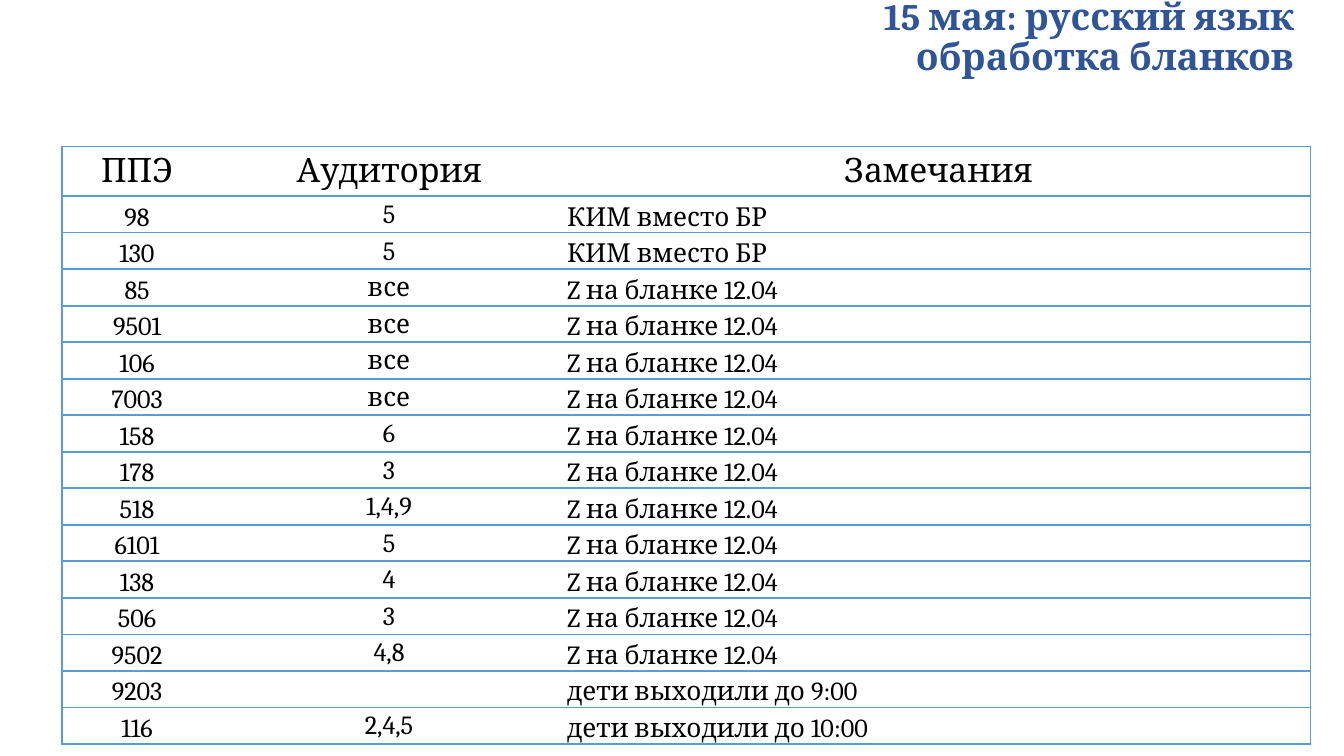
"""Build the slide listing remarks on processing the Russian language exam forms."""
import pptx
import pptx.dml.color
import pptx.enum.text
import pptx.oxml
import pptx.oxml.ns
import pptx.util

THEME = {
    "font": "Cambria",
    "title": "2F5597", "text": "000000", "line": "5B9BD5", "fill": "FFFFFF",
    "title_size": 20, "header_size": 18, "body_size": 14, "line_width": 1,
}
ALIGN = pptx.enum.text.PP_ALIGN
ANCHOR = pptx.enum.text.MSO_ANCHOR
inches = pptx.util.Inches


def style(para, size, color, align, bold=False):
    para.alignment = align
    para.font.name = THEME["font"]
    para.font.size = pptx.util.Pt(size)
    para.font.bold = bold
    para.font.color.rgb = pptx.dml.color.RGBColor.from_string(color)


def add_border(cell, side, visible):
    color = THEME["line"]
    paint = f'<a:solidFill><a:srgbClr val="{color}"/></a:solidFill>' if visible else "<a:noFill/>"
    width = pptx.util.Pt(THEME["line_width"])
    namespace = pptx.oxml.ns.nsdecls("a")
    line = pptx.oxml.parse_xml(f'<a:ln{side} {namespace} w="{width}">{paint}</a:ln{side}>')
    cell._tc.get_or_add_tcPr().append(line)


deck = pptx.Presentation()
deck.slide_width = inches(10)
deck.slide_height = deck.slide_width * 9 // 16
page = deck.slides.add_slide(deck.slide_layouts[6])

form_remark = "Z на бланке 12.04"
rooms = [("85", "все"), ("9501", "все"), ("106", "все"), ("7003", "все"), ("158", "6"),
         ("178", "3"), ("518", "1,4,9"), ("6101", "5"), ("138", "4"), ("506", "3"),
         ("9502", "4,8")]
records = [
    ("ППЭ", "Аудитория", "Замечания"),
    ("98", "5", "КИМ вместо БР"),
    ("130", "5", "КИМ вместо БР"),
    *[(point, room, form_remark) for point, room in rooms],
    ("9203", "", "дети выходили до 9:00"),
    ("116", "2,4,5", "дети выходили до 10:00"),
]
column_widths = [1.12, 2.63, 5.54]
table_height, header_height = 4.45, 0.37
row_height = (table_height - header_height) / (len(records) - 1)

table = page.shapes.add_table(
    len(records), len(column_widths), inches(0.46), inches(1.09),
    inches(sum(column_widths)), inches(table_height)).table
table.first_row = False
table.horz_banding = False
for column, width in zip(table.columns, column_widths):
    column.width = inches(width)

last = len(column_widths) - 1
for r, record in enumerate(records):
    header = r == 0
    table.rows[r].height = inches(header_height if header else row_height)
    size = THEME["header_size" if header else "body_size"]
    for c, wording in enumerate(record):
        cell = table.cell(r, c)
        cell.margin_left = cell.margin_right = cell.margin_top = inches(0.01)
        cell.margin_bottom = 0
        cell.vertical_anchor = ANCHOR.MIDDLE if header or c == 1 else ANCHOR.BOTTOM
        for side, visible in (("L", c == 0), ("R", c == last), ("T", True), ("B", True)):
            add_border(cell, side, visible)
        cell.fill.solid()
        cell.fill.fore_color.rgb = pptx.dml.color.RGBColor.from_string(THEME["fill"])
        para = cell.text_frame.paragraphs[0]
        if wording:
            para.text = wording
        else:
            para._p.get_or_add_endParaRPr().set("sz", str(size * 100))
        style(para, size, THEME["text"], ALIGN.LEFT if c == last and not header else ALIGN.CENTER)

title = page.shapes.add_textbox(inches(0.98), inches(0.02), inches(8.74), inches(0.53))
frame = title.text_frame
frame.word_wrap = True
frame.vertical_anchor = ANCHOR.MIDDLE
frame.margin_left = frame.margin_right = inches(0.09)
frame.margin_top = frame.margin_bottom = inches(0.04)
frame.text = "15 мая: русский язык\nобработка бланков"
for para in frame.paragraphs:
    para.line_spacing = 0.9
    style(para, THEME["title_size"], THEME["title"], ALIGN.RIGHT, bold=True)

deck.save("out.pptx")
